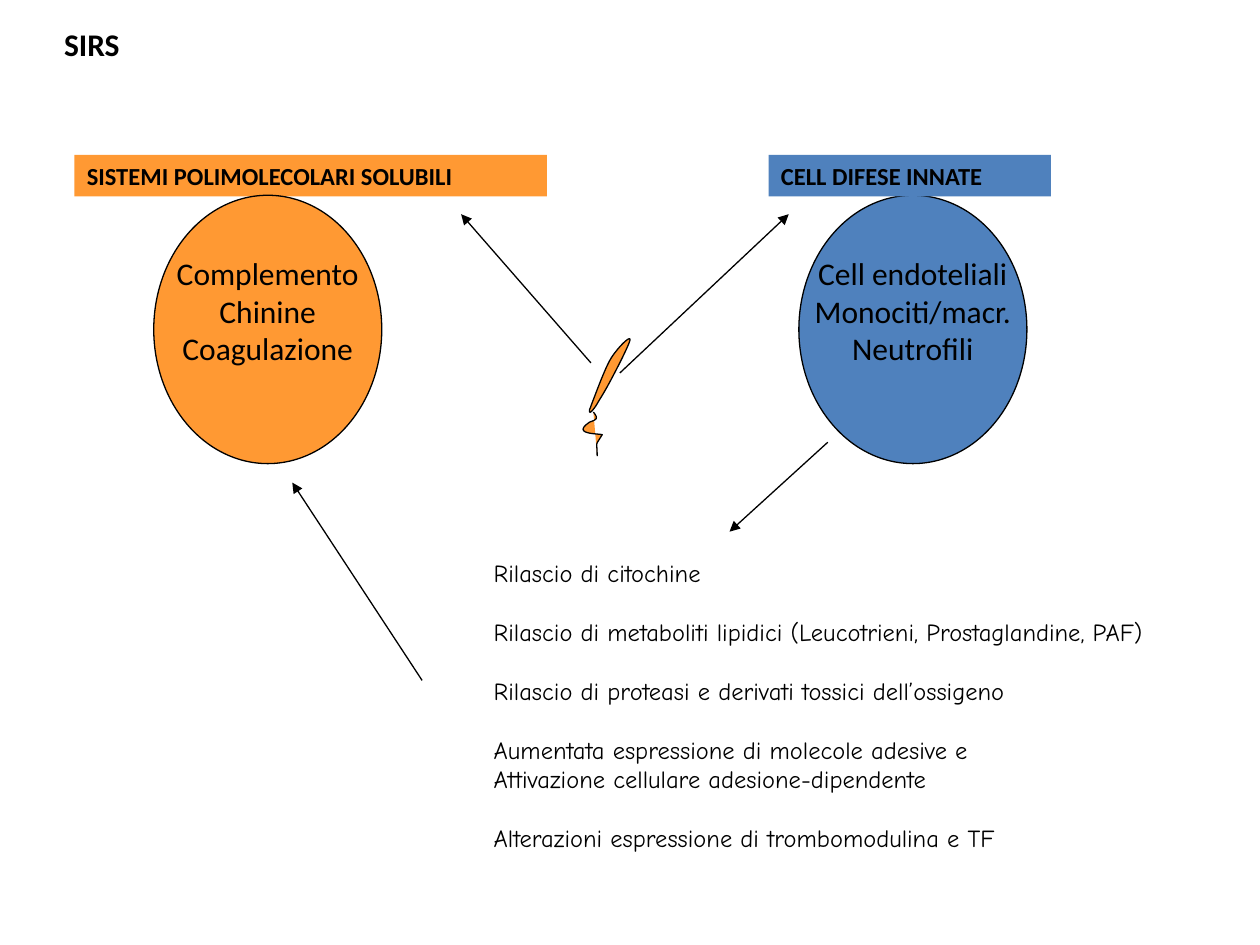
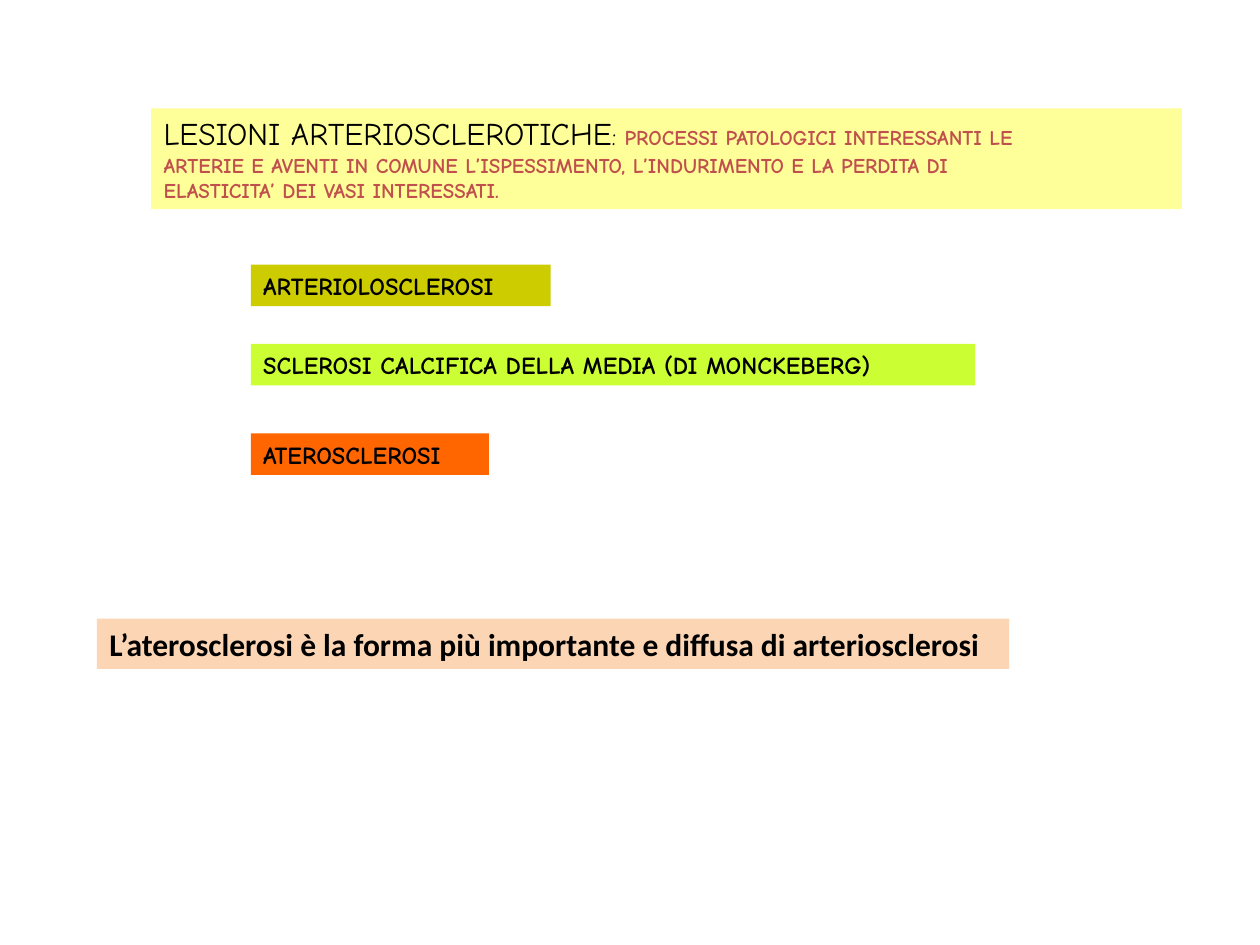
import pptx
import pptx.dml.color
import pptx.enum.shapes
import pptx.enum.text
import pptx.util
from lxml import etree
from pptx.oxml.ns import qn

PX = 9144  # EMU in one px, 100 px to the inch
BODY, HAND = "Calibri", "Comic Neue"
COLOURS = {
    "ink": "000000", "orange": "FF9933", "blue": "4F81BD", "yellow": "FFFF99",
    "red": "C0504D", "olive": "CCCC00", "lime": "CCFF33", "flame": "FF6600",
    "peach": "FCD5B5",
}
SHAPES = pptx.enum.shapes.MSO_SHAPE
ALIGN = pptx.enum.text.PP_ALIGN
ANCHOR = pptx.enum.text.MSO_ANCHOR


def colour(name):
    return pptx.dml.color.RGBColor.from_string(COLOURS[name])


def emu(*lengths):
    return [length * PX for length in lengths]


def paint(shape, fill, outlined=False):
    shape.shadow.inherit = False
    shape.fill.solid()
    shape.fill.fore_color.rgb = colour(fill)
    if outlined:
        shape.line.color.rgb = colour("ink")
        shape.line.width = pptx.util.Pt(0.75)
    else:
        shape.line.fill.background()


def style(font, face, size, bold=False, ink="ink"):
    font.name, font.size, font.bold = face, pptx.util.Pt(size), bold
    font.color.rgb = colour(ink)


def write(shape, lines, face, size, bold=False, align=ALIGN.LEFT, wrap=True):
    """Fill a shape with one paragraph per line and return the paragraphs."""
    frame = shape.text_frame
    frame.word_wrap = wrap
    frame.text = "\n".join(lines)
    for para in frame.paragraphs:
        para.alignment = align
        style(para.font, face, size, bold)
    return frame.paragraphs


def add_text(page, box, lines, face, size, bold=False):
    return write(page.shapes.add_textbox(*emu(*box)), lines, face, size, bold)


def add_band(page, box, fill, lines, face, size, bold=True):
    band = page.shapes.add_shape(SHAPES.RECTANGLE, *emu(*box))
    paint(band, fill)
    band.text_frame.vertical_anchor = ANCHOR.TOP
    return write(band, lines, face, size, bold)


def add_oval(page, box, fill, lines):
    oval = page.shapes.add_shape(SHAPES.OVAL, *emu(*box))
    paint(oval, fill, outlined=True)
    write(oval, lines, BODY, 18, align=ALIGN.CENTER, wrap=False)
    oval.text_frame.vertical_anchor = ANCHOR.MIDDLE
    oval.text_frame.margin_bottom = 35 * PX  # lifts the text above the centre


def add_arrow(page, *ends):
    arrow = page.shapes.add_connector(
        pptx.enum.shapes.MSO_CONNECTOR.STRAIGHT, *emu(*ends))
    arrow.line.color.rgb = colour("ink")
    arrow.line.width = pptx.util.Pt(0.75)
    etree.SubElement(arrow.line._get_or_add_ln(), qn("a:tailEnd"), type="triangle")
    etree.SubElement(arrow._element.spPr, qn("a:effectLst"))


def curve_points(start, curves, steps=12):
    """Sample a chain of cubic curves, each (control, control, end)."""
    points = []
    for first, second, end in curves:
        for step in range(1, steps + 1):
            t = step / steps
            u = 1 - t
            points.append(tuple(
                u**3 * a + 3 * u * u * t * b + 3 * u * t * t * c + t**3 * d
                for a, b, c, d in zip(start, first, second, end)))
        start = end
    return points


def add_curve(page, left, top, start, curves, close):
    def place(point):
        return round((left + point[0]) * PX), round((top + point[1]) * PX)

    builder = page.shapes.build_freeform(*place(start))
    points = [place(point) for point in curve_points(start, curves)]
    builder.add_line_segments(points, close=close)
    paint(builder.convert_to_shape(), "orange", outlined=True)


def add_bacterium(page, left, top):
    # Body
    add_curve(page, left, top, (31, 21), [
        ((26, 30), (17, 55), (15, 60)), ((14, 65), (18, 61), (23, 52)),
        ((29, 43), (46, 10), (47, 5)), ((48, 0), (36, 12), (31, 21))], True)
    # Tail
    add_curve(page, left, top, (18, 62), [
        ((22, 67), (21, 68), (15, 70)), ((0, 80), (22, 79), (25, 80)),
        ((19, 90), (21, 84), (21, 97))], False)


def add_release_list(page, box):
    paras = add_text(page, box, [
        "Rilascio di citochine",
        "Rilascio di metaboliti lipidici (Leucotrieni, Prostaglandine, PAF)",
        "Rilascio di proteasi e derivati tossici dell’ossigeno",
        "Aumentata espressione di molecole adesive e",
        "Attivazione cellulare adesione-dipendente",
        "Alterazioni espressione di trombomodulina e TF"], HAND, 14)
    for index in (1, 2, 3, 5):
        paras[index].space_before = pptx.util.Pt(16.8)


def build_sirs(page):
    add_text(page, (41, 15, 78, 40), ["SIRS"], BODY, 18, True)

    # Innate defence cells
    add_oval(page, (634, 155, 181, 213), "blue",
             ["Cell endoteliali", "Monociti/macr.", "Neutrofili"])
    add_band(page, (610, 123, 224, 33), "blue", ["CELL DIFESE INNATE"], BODY, 14)

    # Soluble systems
    add_band(page, (59, 123, 375, 33), "orange",
             ["SISTEMI POLIMOLECOLARI SOLUBILI"], BODY, 14)
    add_oval(page, (122, 155, 181, 213), "orange",
             ["Complemento", "Chinine", "Coagulazione"])

    # Trigger, effects and the arrows between them
    add_bacterium(page, 453, 265)
    add_release_list(page, (382, 438, 585, 243))
    for ends in ((492, 296, 626, 170), (469, 288, 366, 170),
                 (657, 351, 579, 422), (335, 540, 232, 383)):
        add_arrow(page, *ends)


def add_definition(page, box):
    paras = add_band(page, box, "yellow", [
        "",
        "ARTERIE E AVENTI IN COMUNE L’ISPESSIMENTO, L’INDURIMENTO E LA PERDITA DI",
        "ELASTICITA’ DEI VASI INTERESSATI."], HAND, 12)
    for para in paras[1:]:
        para.font.color.rgb = colour("red")
    for words, size, bold, ink in (
            ("LESIONI ARTERIOSCLEROTICHE", 18, False, "ink"),
            (": ", 14, False, "ink"),
            ("PROCESSI PATOLOGICI INTERESSANTI LE", 12, True, "red")):
        span = paras[0].add_run()
        span.text = words
        style(span.font, HAND, size, bold, ink)


def build_lesions(page):
    add_definition(page, (120, 86, 818, 80))
    # Three types of lesion
    for top, width, fill, name in (
            (210, 238, "olive", "ARTERIOLOSCLEROSI"),
            (273, 575, "lime", "SCLEROSI CALCIFICA DELLA MEDIA (DI MONCKEBERG)"),
            (344, 189, "flame", "ATEROSCLEROSI")):
        add_band(page, (199, top, width, 33), fill, [name], HAND, 14)
    # Conclusion
    add_band(page, (77, 491, 724, 40), "peach",
             ["L’aterosclerosi è la forma più importante e diffusa di arteriosclerosi"],
             BODY, 18)


def main():
    deck = pptx.Presentation()
    deck.slide_width, deck.slide_height = emu(1000, 750)
    for build in (build_sirs, build_lesions):
        build(deck.slides.add_slide(deck.slide_layouts[6]))
    deck.save("out.pptx")


if __name__ == "__main__":
    main()
